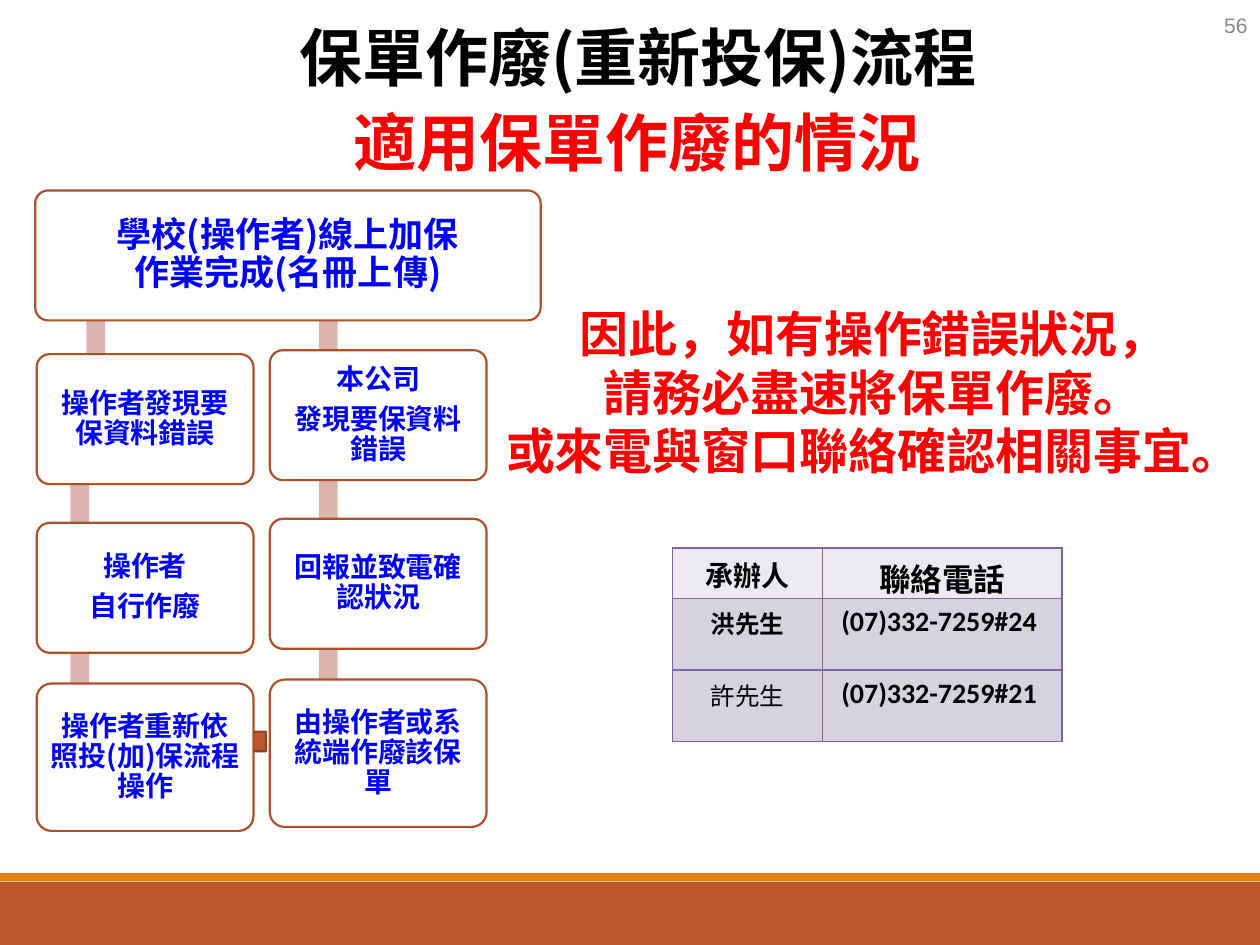
from dataclasses import dataclass

from lxml.etree import SubElement
from pptx import Presentation
from pptx.dml.color import RGBColor
from pptx.enum.shapes import MSO_SHAPE
from pptx.enum.text import MSO_ANCHOR, PP_ALIGN
from pptx.oxml.ns import qn
from pptx.util import Cm, Pt


@dataclass(frozen=True)
class Theme:
    cjk: str = "Noto Sans CJK SC"
    latin: str = "Calibri"
    plain: str = "Arial"
    black: str = "000000"
    red: str = "FF0000"
    blue: str = "0000FF"
    grey: str = "898989"
    white: str = "FFFFFF"
    rust: str = "BD582C"
    orange: str = "E48312"
    box_line: str = "AC5028"
    arrow_line: str = "8C4121"
    bar: str = "DBB5AD"
    table_line: str = "8064A2"
    head_fill: str = "ECEAF0"
    body_fill: str = "D7D2DF"
    title_size: int = 36
    message_size: int = 28
    start_size: int = 20
    head_size: int = 18
    step_size: int = 16
    name_size: int = 14
    number_size: int = 12


THEME = Theme()


def color(value):
    return RGBColor.from_string(value)


def write_text(frame, text, size, font=THEME.cjk, ink=THEME.black, bold=True,
               align=PP_ALIGN.CENTER, anchor=MSO_ANCHOR.MIDDLE,
               spacing=1.0, after=0, inset=None, wrap=True):
    frame.word_wrap = wrap
    frame.vertical_anchor = anchor
    if inset is not None:
        frame.margin_left = frame.margin_right = Cm(inset)
        frame.margin_top = frame.margin_bottom = Cm(inset)
    for index, line in enumerate(text.split("\n")):
        para = frame.add_paragraph() if index else frame.paragraphs[0]
        para.alignment = align
        para.line_spacing = spacing
        para.space_before = Pt(0)
        para.space_after = Pt(after)
        span = para.add_run()
        span.text = line
        span.font.size = Pt(size)
        span.font.bold = bold
        span.font.color.rgb = color(ink)
        span.font.name = font
        SubElement(span.font._element, qn("a:ea"), typeface=THEME.cjk)


def add_text(page, area, text, size, **style):
    box = page.shapes.add_textbox(*map(Cm, area))
    write_text(box.text_frame, text, size, **style)


def add_block(page, area, fill, line=None, kind=MSO_SHAPE.RECTANGLE):
    block = page.shapes.add_shape(kind, *map(Cm, area))
    block.shadow.inherit = False
    block.fill.solid()
    block.fill.fore_color.rgb = color(fill)
    if line:
        block.line.color.rgb = color(line)
        block.line.width = Pt(1.25)
    else:
        block.line.fill.background()
    return block


def add_step(page, area, text, size, after=0):
    step = add_block(page, area, THEME.white, THEME.box_line,
                     MSO_SHAPE.ROUNDED_RECTANGLE)
    step.adjustments[0] = 0.1
    write_text(step.text_frame, text, size, ink=THEME.blue,
               spacing=0.9, after=after, inset=0.17)


def add_column(page, left, first_top, bar_lefts, texts):
    for bar_left, top, height in zip(bar_lefts, (3.9, 7.8, 11.18), (4.37, 3.38, 3.4)):
        add_block(page, (bar_left, top, 0.38, height), THEME.bar)
    for text, offset, height in zip(texts, (0, 3.4, 6.64), (2.62, 2.62, 2.97)):
        add_step(page, (left, first_top + offset, 4.37, height), text,
                 THEME.step_size, after=5.6)


def style_cell(cell, fill):
    properties = cell._tc.get_or_add_tcPr()
    for side in ("a:lnL", "a:lnR", "a:lnT", "a:lnB"):
        edge = SubElement(properties, qn(side), w=str(Pt(0.96)))
        paint = SubElement(edge, qn("a:solidFill"))
        SubElement(paint, qn("a:srgbClr"), val=THEME.table_line)
    cell.fill.solid()
    cell.fill.fore_color.rgb = color(fill)
    cell.margin_bottom = 0


def add_contacts(page):
    number = {"size": THEME.step_size, "font": THEME.latin}
    rows = [
        [("承辦人", {"size": THEME.step_size}), ("聯絡電話", {"size": THEME.head_size})],
        [("洪先生", {"size": THEME.name_size, "font": THEME.latin}),
         ("(07)332-7259#24 ", number)],
        [("許先生", {"size": THEME.name_size, "font": THEME.plain, "bold": False}),
         ("(07)332-7259#21 ", number)],
    ]
    table = page.shapes.add_table(3, 2, Cm(13.56), Cm(11.05), Cm(7.87), Cm(3.9)).table
    for column, width in zip(table.columns, (3.02, 4.83)):
        column.width = Cm(width)
    for row, height in zip(table.rows, (1.02, 1.44, 1.44)):
        row.height = Cm(height)
    for r, row in enumerate(rows):
        for c, (text, style) in enumerate(row):
            cell = table.cell(r, c)
            style_cell(cell, THEME.body_fill if r else THEME.head_fill)
            write_text(cell.text_frame, text, anchor=MSO_ANCHOR.TOP, **style)


def add_title(page, text):
    title = page.shapes.title
    title.left, title.top, title.width, title.height = map(Cm, (4.95, 0.25, 15.82, 1.78))
    write_text(title.text_frame, text, THEME.title_size)


def main():
    deck = Presentation()
    deck.slide_width, deck.slide_height = Cm(25.4), Cm(19.05)
    page = deck.slides.add_slide(deck.slide_layouts[5])

    add_block(page, (0, 17.78, 25.4, 1.27), THEME.rust)
    add_block(page, (0, 17.6, 25.4, 0.17), THEME.orange)
    add_title(page, "保單作廢(重新投保)流程")
    add_text(page, (6.88, 1.96, 11.94, 1.78), "適用保單作廢的情況",
             THEME.title_size, ink=THEME.red, wrap=False)
    add_text(page, (9.8, 5.99, 15.6, 7.01),
             "因此，如有操作錯誤狀況，\n請務必盡速將保單作廢。\n或來電與窗口聯絡確認相關事宜。",
             THEME.message_size, ink=THEME.red, anchor=MSO_ANCHOR.TOP)
    add_contacts(page)

    add_column(page, 5.44, 7.06, (6.43, 6.43, 6.43),
               ("本公司\n發現要保資料錯誤", "回報並致電確認狀況", "由操作者或系統端作廢該保單"))
    arrow = add_block(page, (4.6, 14.55, 0.76, 0.79), THEME.rust,
                      THEME.arrow_line, MSO_SHAPE.RIGHT_ARROW)
    arrow.rotation = 180
    add_column(page, 0.74, 7.14, (1.74, 1.42, 1.42),
               ("操作者發現要保資料錯誤", "操作者\n自行作廢", "操作者重新依照投(加)保流程操作"))
    add_step(page, (0.71, 3.84, 10.19, 2.62),
             "學校(操作者)線上加保\n作業完成(名冊上傳)", THEME.start_size)
    add_text(page, (22.66, 0, 2.74, 1.02), "56", THEME.number_size, font=THEME.plain,
             ink=THEME.grey, bold=False, align=PP_ALIGN.RIGHT)

    deck.save("out.pptx")


if __name__ == "__main__":
    main()
